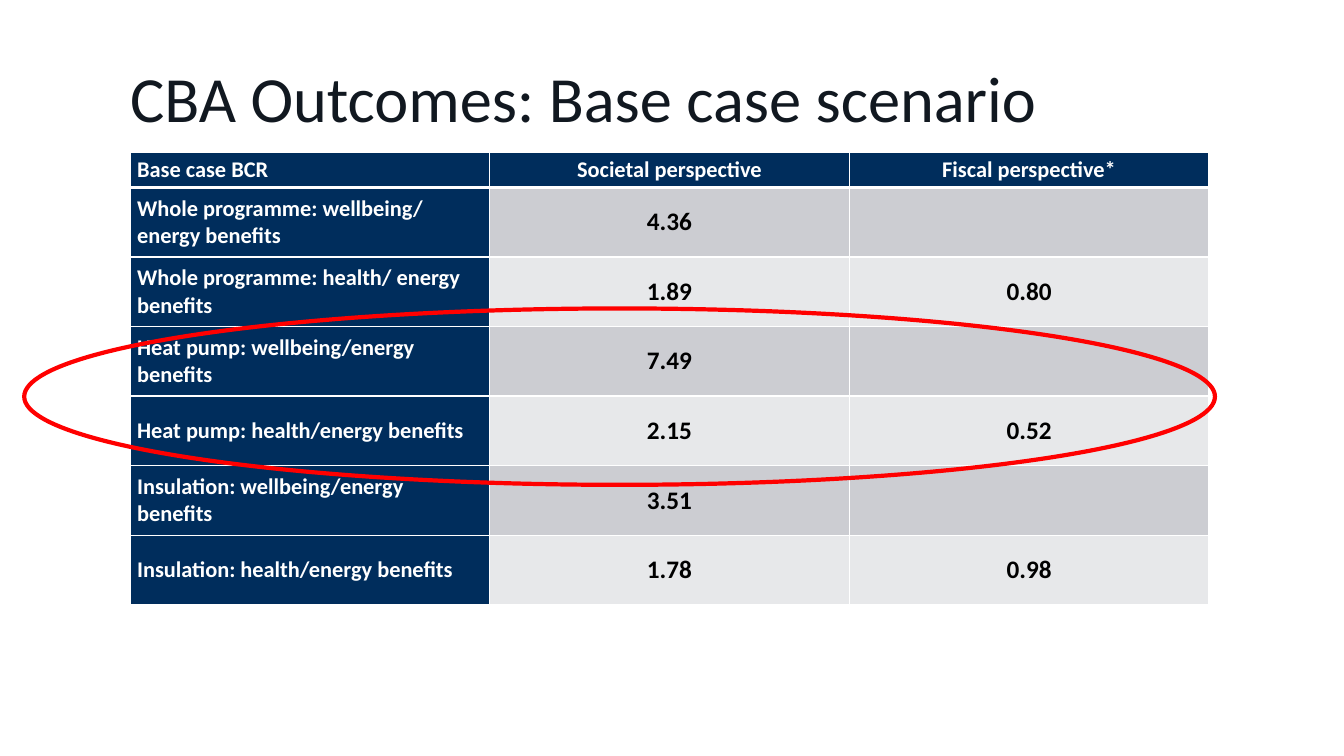
from lxml.etree import SubElement
from pptx import Presentation
from pptx.dml.color import RGBColor
from pptx.enum.shapes import MSO_SHAPE
from pptx.enum.text import MSO_ANCHOR, PP_ALIGN
from pptx.oxml.ns import qn
from pptx.util import Inches, Pt

COLORS = {
    "title": "111820",
    "navy": "002D5C",
    "dark": "CCCDD2",
    "light": "E7E8EA",
    "white": "FFFFFF",
    "black": "000000",
    "red": "FF0000",
}

ROWS = [
    ("Base case BCR", "Societal perspective", "Fiscal perspective*"),
    ("Whole programme: wellbeing/ energy benefits", "4.36", ""),
    ("Whole programme: health/ energy benefits", "1.89", "0.80"),
    ("Heat pump: wellbeing/energy benefits", "7.49", ""),
    ("Heat pump: health/energy benefits", "2.15", "0.52"),
    ("Insulation: wellbeing/energy benefits", "3.51", ""),
    ("Insulation: health/energy benefits", "1.78", "0.98"),
]


def color(name):
    return RGBColor.from_string(COLORS[name])


class Deck:
    font = "Calibri"

    def __init__(self):
        self.prs = Presentation()
        self.prs.slide_width = Inches(13.33)
        self.prs.slide_height = Inches(7.5)
        self.slide = self.prs.slides.add_slide(self.prs.slide_layouts[5])

    def style(self, para, size, name, bold=False):
        for run in para.runs:
            run.font.name = self.font
            run.font.size = Pt(size)
            run.font.bold = bold
            run.font.color.rgb = color(name)

    def title(self, text, left, top, width, height):
        shape = self.slide.shapes.title
        shape.left, shape.top = Inches(left), Inches(top)
        shape.width, shape.height = Inches(width), Inches(height)
        frame = shape.text_frame
        frame.text = text
        frame.word_wrap = True
        frame.vertical_anchor = MSO_ANCHOR.MIDDLE
        frame.margin_left = frame.margin_right = 0
        frame.margin_top = frame.margin_bottom = 0
        para = frame.paragraphs[0]
        para.alignment = PP_ALIGN.LEFT
        para.line_spacing = 0.9
        self.style(para, 46, "title")

    def border(self, cell, side, width):
        line = SubElement(cell._tc.get_or_add_tcPr(), qn(f"a:ln{side}"), w=str(Pt(width)))
        fill = SubElement(line, qn("a:solidFill"))
        SubElement(fill, qn("a:srgbClr"), val=COLORS["white"])

    def cell(self, cell, text, row, col):
        label = row == 0 or col == 0
        # Borders come before the fill in the cell properties
        for side in "LRTB":
            thick = (row, side) in ((0, "B"), (1, "T"))
            self.border(cell, side, 3 if thick else 1)
        cell.fill.solid()
        cell.fill.fore_color.rgb = color("navy" if label else "dark" if row % 2 else "light")
        cell.vertical_anchor = MSO_ANCHOR.MIDDLE
        cell.margin_left = cell.margin_right = Inches(0.07)
        cell.margin_top = cell.margin_bottom = 0
        cell.text_frame.text = text
        para = cell.text_frame.paragraphs[0]
        para.alignment = PP_ALIGN.CENTER if col else PP_ALIGN.LEFT
        self.style(para, 16 if label else 18, "white" if label else "black", True)

    def table(self, rows, left, top, width, head, body):
        count = len(rows[0])
        height = head + body * (len(rows) - 1)
        table = self.slide.shapes.add_table(
            len(rows), count, Inches(left), Inches(top), Inches(width), Inches(height)).table
        for column in table.columns:
            column.width = Inches(width / count)
        for r, texts in enumerate(rows):
            table.rows[r].height = Inches(body if r else head)
            for c, text in enumerate(texts):
                self.cell(table.cell(r, c), text, r, c)

    def ring(self, left, top, width, height):
        shape = self.slide.shapes.add_shape(
            MSO_SHAPE.OVAL, Inches(left), Inches(top), Inches(width), Inches(height))
        shape.shadow.inherit = False
        shape.fill.background()
        shape.line.color.rgb = color("red")
        shape.line.width = Pt(3)


def main():
    deck = Deck()
    # Heading
    deck.title("CBA Outcomes: Base case scenario", 1.29, 0.28, 11.5, 1.45)
    # Benefit-cost ratios
    deck.table(ROWS, 1.29, 1.51, 10.7, 0.35, 0.69)
    # Highlight around the heat pump rows
    deck.ring(0.24, 3.06, 11.81, 1.75)
    deck.prs.save("out.pptx")


if __name__ == "__main__":
    main()
